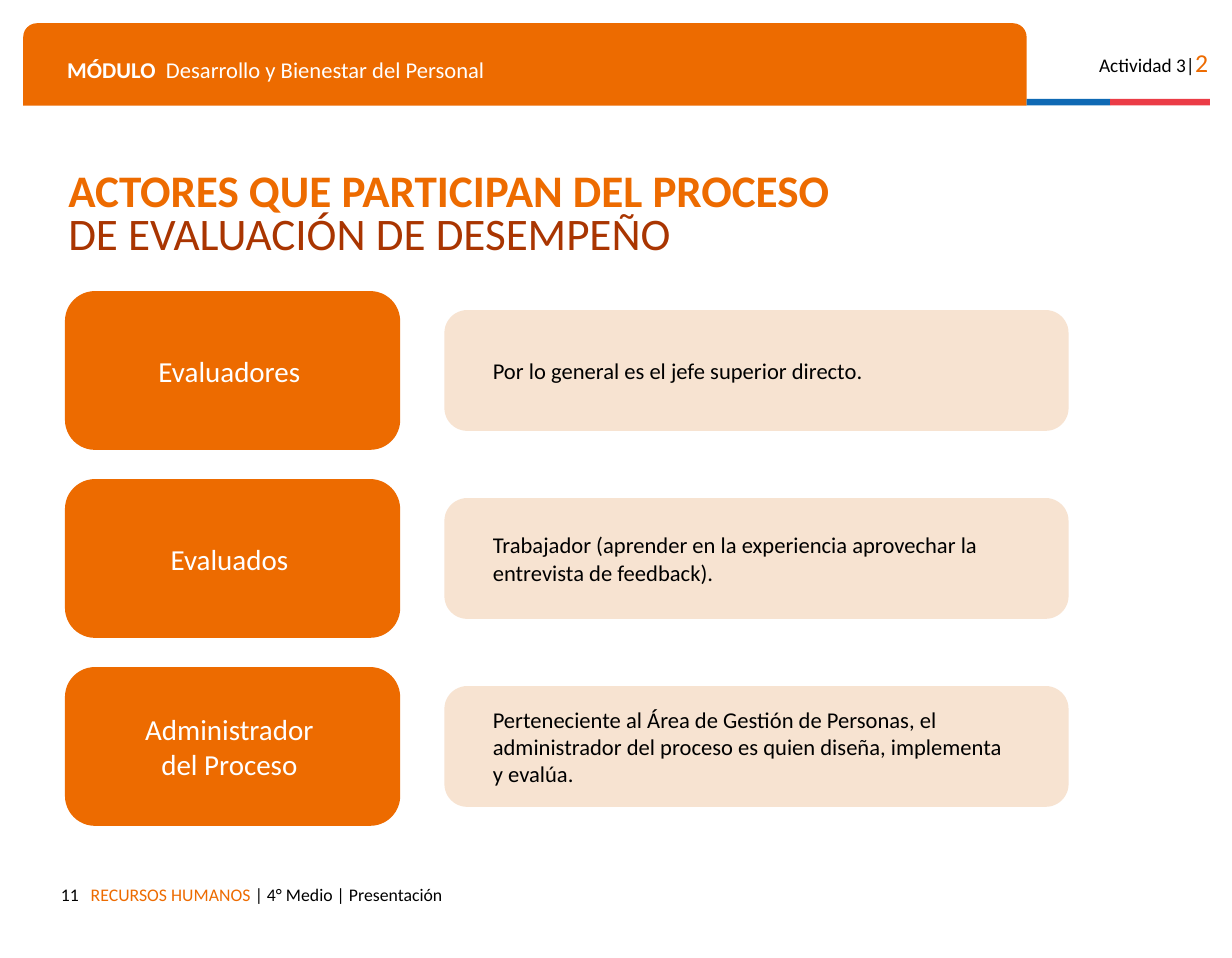
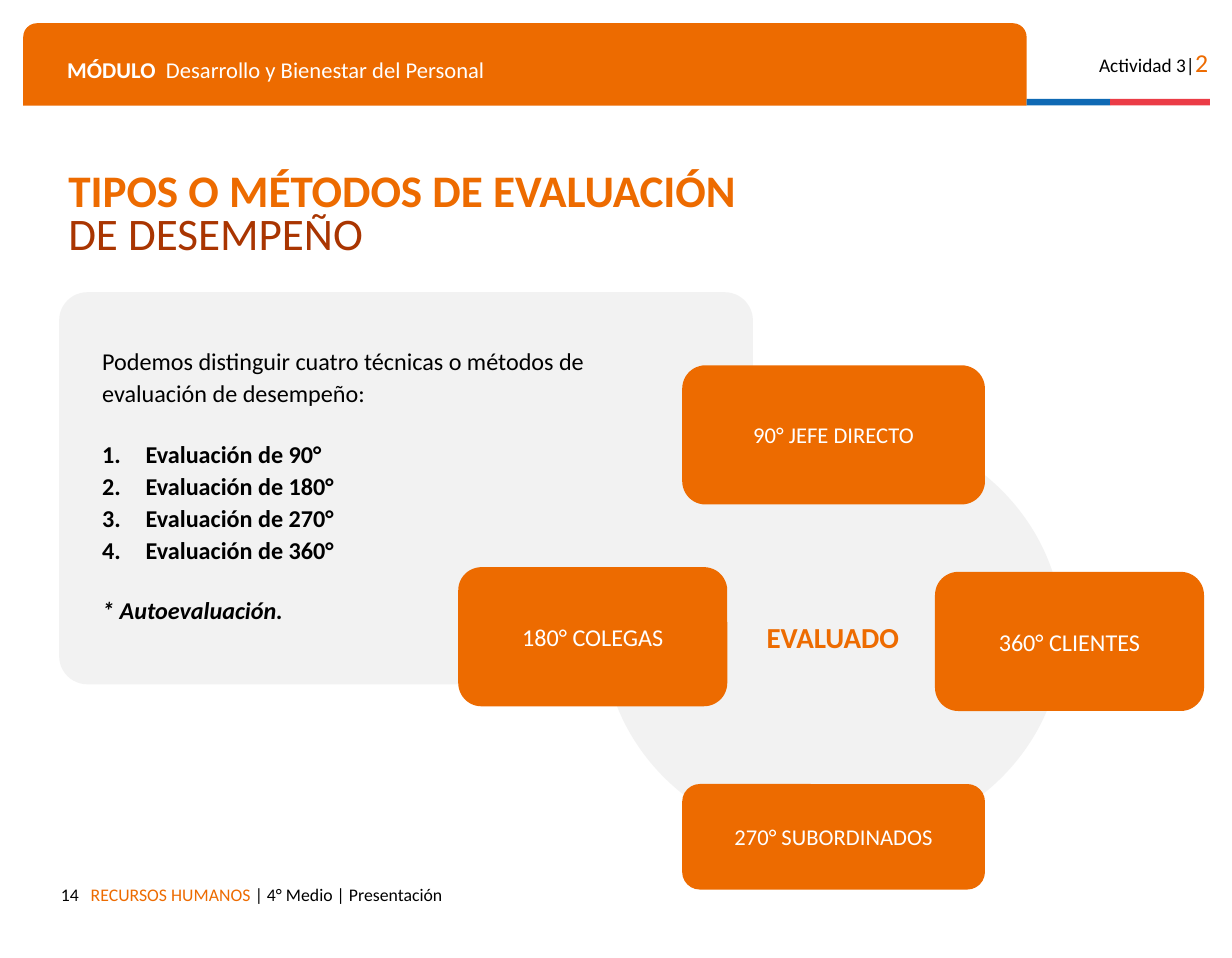
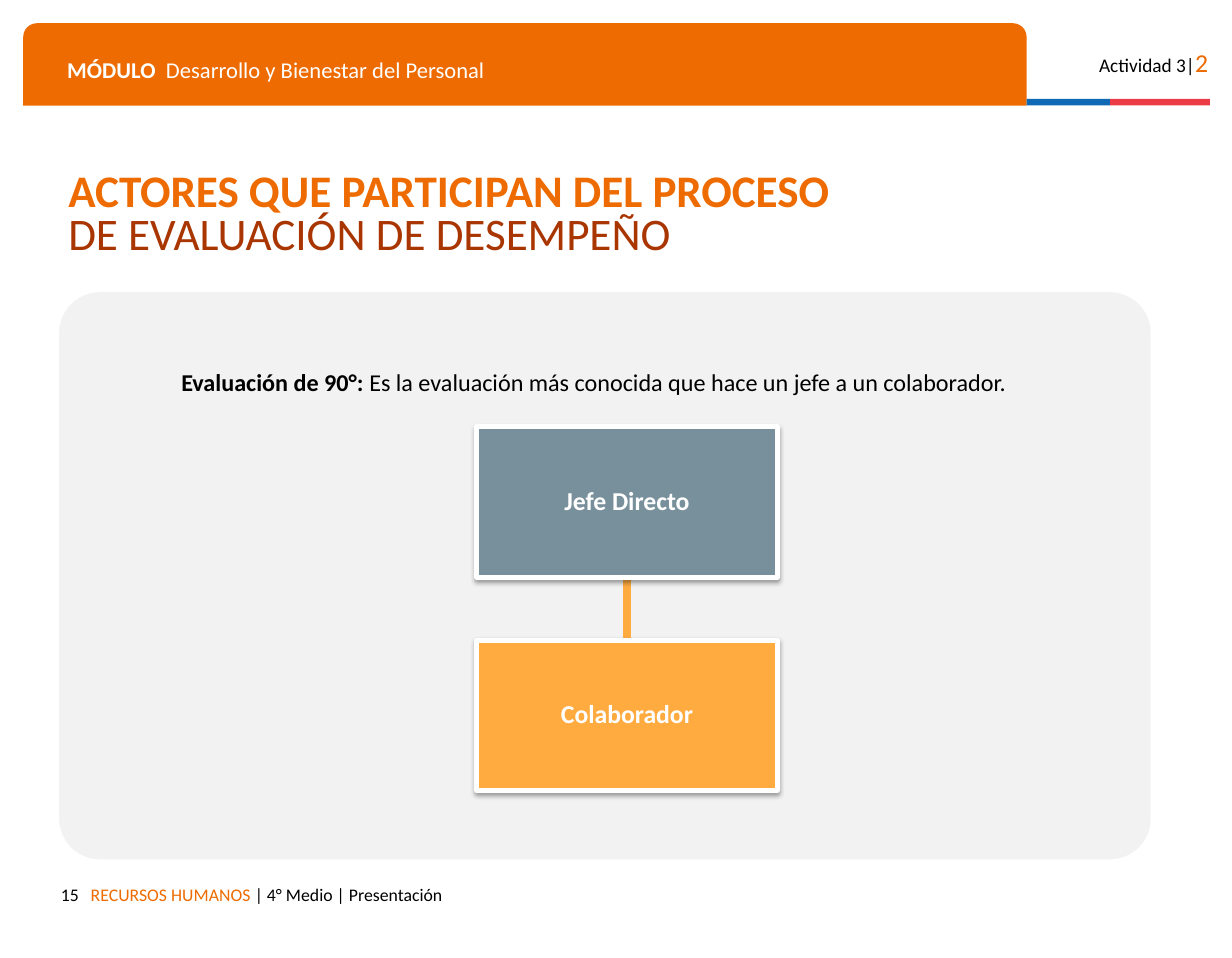
from dataclasses import dataclass
from typing import NamedTuple

from lxml.etree import SubElement
from pptx import Presentation
from pptx.dml.color import RGBColor
from pptx.enum.shapes import MSO_CONNECTOR, MSO_SHAPE as Preset
from pptx.enum.text import MSO_ANCHOR as Anchor, PP_ALIGN as Align
from pptx.oxml.ns import qn
from pptx.shapes.autoshape import Shape
from pptx.slide import Slide
from pptx.text.text import TextFrame
from pptx.util import Pt


@dataclass(frozen=True)
class Theme:
    font: str = "Calibri"
    orange: str = "ED6B00"
    rust: str = "A93501"
    peach: str = "F7E3D1"
    grey: str = "F2F2F2"
    blue: str = "0F69B4"
    red: str = "EB3C46"
    slate: str = "78909C"
    amber: str = "FFAB40"
    black: str = "000000"
    white: str = "FFFFFF"
    title: float = 28
    label: float = 18
    activity: float = 16
    node: float = 16
    body: float = 15
    text: float = 14
    small: float = 12
    footer: float = 11


THEME = Theme()


class Box(NamedTuple):
    left: float
    top: float
    width: float
    height: float


class Insets(NamedTuple):
    left: float = 7.2
    top: float = 7.2
    right: float = 7.2
    bottom: float = 7.2


class Span(NamedTuple):
    text: str
    size: float
    color: str = THEME.black
    bold: bool = False
    italic: bool = False


class Para(NamedTuple):
    spans: list[Span]
    align: Align = Align.LEFT
    spacing: float = 1.0
    before: float = 0
    tab: float = 0
    number_indent: float = 0


class Actor(NamedTuple):
    role: str
    description: str


class Card(NamedTuple):
    box: Box
    text: str
    size: float


# Drawing helpers

def write(frame: TextFrame, paras: list[Para], anchor: Anchor = Anchor.TOP,
          insets: Insets = Insets()) -> None:
    frame.word_wrap = True
    frame.vertical_anchor = anchor
    frame.margin_left, frame.margin_top = Pt(insets.left), Pt(insets.top)
    frame.margin_right, frame.margin_bottom = Pt(insets.right), Pt(insets.bottom)
    for index, para in enumerate(paras):
        line = frame.add_paragraph() if index else frame.paragraphs[0]
        line.text = para.spans[0].text
        for span in para.spans[1:]:
            line.add_run().text = span.text
        properties = line._p.get_or_add_pPr()
        if para.number_indent:
            properties.set("marL", str(Pt(para.number_indent)))
            properties.set("indent", str(-Pt(para.number_indent)))
            color = SubElement(properties, qn("a:buClr"))
            SubElement(color, qn("a:srgbClr"), val=THEME.black)
            SubElement(properties, qn("a:buAutoNum"), type="arabicPeriod")
        if para.tab:
            tabs = SubElement(properties, qn("a:tabLst"))
            SubElement(tabs, qn("a:tab"), pos=str(Pt(para.tab)), algn="l")
        line.alignment = para.align
        line.line_spacing = para.spacing
        if para.before:
            line.space_before = Pt(para.before)
        for run, span in zip(line.runs, para.spans):
            run.font.name = THEME.font
            run.font.size = Pt(span.size)
            run.font.bold, run.font.italic = span.bold, span.italic
            run.font.color.rgb = RGBColor.from_string(span.color)


def add_text(slide: Slide, box: Box, paras: list[Para],
             anchor: Anchor = Anchor.TOP) -> None:
    write(slide.shapes.add_textbox(*map(Pt, box)).text_frame, paras, anchor)


def add_block(slide: Slide, preset: Preset, box: Box, fill: str,
              rounding: float = 0) -> Shape:
    block = slide.shapes.add_shape(preset, *map(Pt, box))
    block.shadow.inherit = False
    block.fill.solid()
    block.fill.fore_color.rgb = RGBColor.from_string(fill)
    block.line.fill.background()
    if rounding:
        block.adjustments[0] = rounding
    return block


def add_node(slide: Slide, box: Box, fill: str, caption: str) -> Shape:
    node = add_block(slide, Preset.RECTANGLE, box, fill)
    node.line.color.rgb = RGBColor.from_string(THEME.white)
    node.line.width = Pt(3)
    effects = node._element.spPr.find(qn("a:effectLst"))
    shadow = SubElement(effects, qn("a:outerShdw"), blurRad=str(Pt(3)),
                        dist=str(Pt(1.8)), dir="5400000", rotWithShape="0")
    color = SubElement(shadow, qn("a:srgbClr"), val=THEME.black)
    SubElement(color, qn("a:alpha"), val="35000")
    write(node.text_frame,
          [Para([Span(caption, THEME.node, THEME.white, True)], Align.CENTER, 0.9)],
          Anchor.MIDDLE, Insets(1, 1, 1, 1))
    return node


# Shared frame: band, activity mark, footer and title

def new_slide(deck: Presentation, page: int, title: str, subtitle: str) -> Slide:
    slide = deck.slides.add_slide(deck.slide_layouts[6])
    add_block(slide, Preset.ROUND_2_SAME_RECTANGLE, Box(14.4, 14.4, 622.8, 51.1),
              THEME.orange, 0.167)
    add_block(slide, Preset.RECTANGLE, Box(637.2, 61.4, 51.8, 4.1), THEME.blue)
    add_block(slide, Preset.RECTANGLE, Box(689, 61.4, 61.9, 4.1), THEME.red)
    add_text(slide, Box(34.6, 27.4, 586, 29.5), [Para([
        Span("MÓDULO", THEME.text, THEME.white, True),
        Span("\tDesarrollo y Bienestar del Personal", THEME.text, THEME.white),
    ], tab=61.3)])
    add_text(slide, Box(664.6, 21.6, 92.2, 31), [Para([
        Span("Actividad 3|", THEME.small),
        Span("2", THEME.activity, THEME.orange),
    ], Align.RIGHT)])
    add_text(slide, Box(29.5, 542.2, 26.6, 25.2),
             [Para([Span(str(page), THEME.footer)], Align.RIGHT)])
    add_text(slide, Box(49.2, 542.2, 514, 25.2), [Para([
        Span("RECURSOS HUMANOS ", THEME.footer, THEME.orange),
        Span("| 4° Medio | Presentación", THEME.footer),
    ])])
    add_text(slide, Box(35.3, 98.6, 704.9, 70.6), [
        Para([Span(title, THEME.title, THEME.orange, True)], spacing=0.8),
        Para([Span(subtitle, THEME.title, THEME.rust)], spacing=0.8),
    ], Anchor.MIDDLE)
    return slide


ACTORS_TITLE = ("ACTORES QUE PARTICIPAN DEL PROCESO", "DE EVALUACIÓN DE DESEMPEÑO")


# Actors of the process

def build_actors(deck: Presentation) -> None:
    slide = new_slide(deck, 11, *ACTORS_TITLE)
    actors = [
        Actor("Evaluadores", "Por lo general es el jefe superior directo."),
        Actor("Evaluados", "Trabajador (aprender en la experiencia aprovechar la "
              "entrevista de feedback)."),
        Actor("Administrador\ndel Proceso", "Perteneciente al Área de Gestión de "
              "Personas, el administrador del proceso es quien diseña, implementa "
              "y evalúa."),
    ]
    first_top, pitch, role_height, description_height = 180.7, 116.7, 98.6, 75
    for row, actor in enumerate(actors):
        top = first_top + row * pitch
        inner_top = top + (role_height - description_height) / 2
        description = add_block(slide, Preset.ROUNDED_RECTANGLE,
                                Box(275.8, inner_top, 387.4, description_height),
                                THEME.peach, 0.189)
        write(description.text_frame, [Para([Span(actor.description, THEME.text)])],
              Anchor.MIDDLE, Insets(left=25.9, right=36))
        role = add_block(slide, Preset.ROUNDED_RECTANGLE,
                         Box(40.3, top, 208.1, role_height), THEME.orange, 0.189)
        write(role.text_frame,
              [Para([Span(line, THEME.label, THEME.white)], Align.CENTER)
               for line in actor.role.split("\n")],
              Anchor.MIDDLE, Insets(right=11))


# Evaluation methods

def build_methods(deck: Presentation) -> None:
    slide = new_slide(deck, 14, "TIPOS O MÉTODOS DE EVALUACIÓN", "DE DESEMPEÑO")
    gap = 18
    methods = [
        Para([Span(f"Evaluación de {degrees}°", THEME.body, bold=True)], spacing=1.1,
             before=0 if row else gap, number_indent=27)
        for row, degrees in enumerate((90, 180, 270, 360))
    ]
    panel = add_block(slide, Preset.ROUNDED_RECTANGLE, Box(36.7, 181.4, 430.6, 243.4),
                      THEME.grey, 0.072)
    write(panel.text_frame, [
        Para([Span("Podemos distinguir cuatro técnicas o métodos de evaluación de "
                   "desempeño:", THEME.body)], spacing=1.1),
        *methods,
        Para([Span("* Autoevaluación.", THEME.body, bold=True, italic=True)],
             spacing=1.1, before=gap),
    ], Anchor.MIDDLE, Insets(left=21.6, right=53, bottom=12.2))

    circle = add_block(slide, Preset.OVAL, Box(374.4, 262.1, 285.1, 262.8), THEME.grey)
    write(circle.text_frame,
          [Para([Span("EVALUADO", THEME.label, THEME.orange, True)], Align.CENTER)],
          Anchor.MIDDLE, Insets(top=11))
    cards = [
        Card(Box(580.3, 355, 167, 86.4), "360° CLIENTES", THEME.body),
        Card(Box(423.4, 486.7, 187.9, 65.5), "270° SUBORDINADOS", THEME.text),
        Card(Box(284.4, 352.1, 167, 86.4), "180° COLEGAS", THEME.body),
        Card(Box(423.4, 226.8, 187.9, 86.4), "90° JEFE DIRECTO", THEME.text),
    ]
    for card in cards:
        block = add_block(slide, Preset.ROUNDED_RECTANGLE, card.box, THEME.orange, 0.167)
        write(block.text_frame,
              [Para([Span(card.text, card.size, THEME.white)], Align.CENTER)],
              Anchor.MIDDLE)


# 90° evaluation

def build_direct_evaluation(deck: Presentation) -> None:
    slide = new_slide(deck, 15, *ACTORS_TITLE)
    panel = add_block(slide, Preset.ROUNDED_RECTANGLE, Box(36.7, 181.4, 677.5, 352.1),
                      THEME.grey, 0.072)
    write(panel.text_frame, [Para([
        Span("Evaluación de 90°: ", THEME.body, bold=True),
        Span("Es la evaluación más conocida que hace un jefe a un colaborador.",
             THEME.body),
    ], spacing=1.1)], insets=Insets(left=68.4, top=37.4))

    link = slide.shapes.add_connector(MSO_CONNECTOR.STRAIGHT, 0, 0, 0, 0)
    link.line.color.rgb = RGBColor.from_string(THEME.amber)
    link.line.width = Pt(4.5)
    SubElement(link._element.spPr, qn("a:effectLst"))
    manager = add_node(slide, Box(295.9, 265, 186.5, 93.3), THEME.slate, "Jefe Directo")
    employee = add_node(slide, Box(295.9, 397.4, 186.5, 93.3), THEME.amber, "Colaborador")
    link.begin_connect(manager, 2)
    link.end_connect(employee, 0)


def main() -> None:
    deck = Presentation()
    deck.slide_width, deck.slide_height = Pt(764.64), Pt(594.72)
    build_actors(deck)
    build_methods(deck)
    build_direct_evaluation(deck)
    deck.save("out.pptx")


if __name__ == "__main__":
    main()
